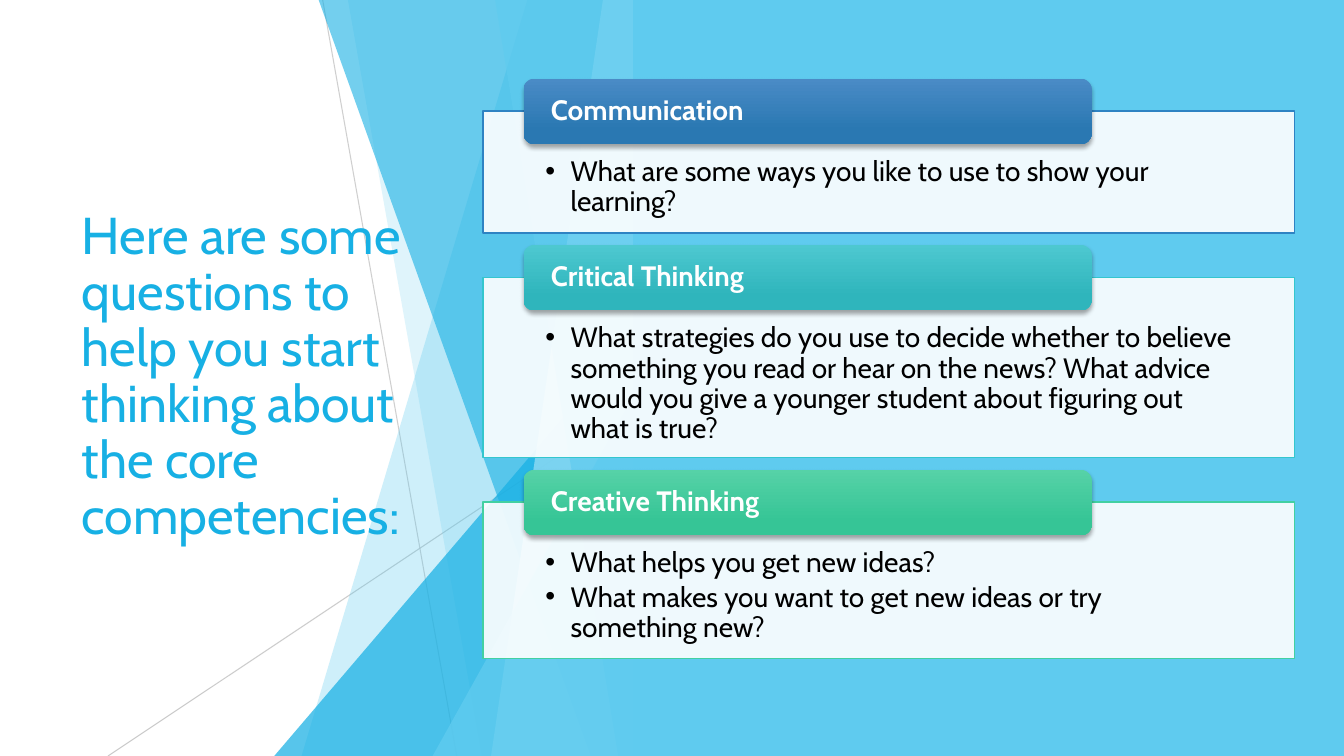
from dataclasses import dataclass

from lxml.etree import SubElement
from pptx import Presentation
from pptx.dml.color import RGBColor
from pptx.enum.shapes import MSO_CONNECTOR, MSO_SHAPE
from pptx.enum.text import MSO_ANCHOR, MSO_AUTO_SIZE, PP_ALIGN
from pptx.oxml.ns import qn
from pptx.util import Inches, Pt


@dataclass(frozen=True)
class Theme:
    font: str = "Cabin"
    big: int = 37
    text: int = 20
    white: str = "FFFFFF"
    ink: str = "000000"
    sky: str = "5FCBEF"
    deep: str = "17B0E4"
    pale: str = "9FE0F5"
    gray: str = "BFBFBF"
    blue: tuple = ("2E83C3", "4A8BC6", "2A78B2")
    teal: tuple = ("34C6CE", "4DC8D0", "2FB5BC")
    green: tuple = ("42D0A2", "56D2A7", "36C596")


@dataclass(frozen=True)
class Box:
    left: int
    top: int
    width: int
    height: int

    def point(self, x, y):
        return (round(self.left + self.width * x / 100),
                round(self.top + self.height * y / 100))

    def inner(self, x, y, w, h):
        return Box(*self.point(x, y), round(self.width * w / 100),
                   round(self.height * h / 100))

    def frame(self):
        return self.left, self.top, self.width, self.height


THEME = Theme()
PAGE = Box(0, 0, Inches(13.33), Inches(7.5))
CARDS = [
    ("Communication", THEME.blue, 16.13,
     ["What are some ways you like to use to show your learning?"]),
    ("Critical Thinking", THEME.teal, 23.87,
     ["What strategies do you use to decide whether to believe something "
      "you read or hear on the news? What advice would you give a younger "
      "student about figuring out what is true?"]),
    ("Creative Thinking", THEME.green, 20.67,
     ["What helps you get new ideas?",
      "What makes you want to get new ideas or try something new?"]),
]


def rgb(code):
    return RGBColor.from_string(code)


def fade(node, alpha):
    tone = next(node.iter(qn("a:srgbClr")))
    SubElement(tone, qn("a:alpha"), val=str(alpha * 1000))


def paint(shape, color, alpha=100, edge=None):
    shape.shadow.inherit = False
    shape.fill.solid()
    shape.fill.fore_color.rgb = rgb(color)
    if alpha < 100:
        fade(shape.element.spPr, alpha)
    if edge:
        shape.line.color.rgb = rgb(edge)
        shape.line.width = Pt(1)
    else:
        shape.line.fill.background()


def write(shape, lines, size=THEME.text, color=THEME.ink, bold=False,
          bullet=False, anchor=MSO_ANCHOR.MIDDLE, pad=(0.1, 0.05, 0.1, 0.05)):
    frame = shape.text_frame
    frame.word_wrap = True
    frame.auto_size = MSO_AUTO_SIZE.NONE
    frame.vertical_anchor = anchor
    (frame.margin_left, frame.margin_top,
     frame.margin_right, frame.margin_bottom) = map(Inches, pad)
    for index, line in enumerate(lines):
        para = frame.add_paragraph() if index else frame.paragraphs[0]
        para.alignment = PP_ALIGN.LEFT
        para.line_spacing = 0.9
        run = para.add_run()
        run.text = line
        run.font.name = THEME.font
        run.font.size = Pt(size)
        run.font.bold = bold
        run.font.color.rgb = rgb(color)
        if bullet:
            para.space_after = Pt(size * 0.15)
            props = para._p.get_or_add_pPr()
            props.set("marL", str(Inches(0.25)))
            props.set("indent", str(-Inches(0.25)))
            SubElement(props, qn("a:buFont"), typeface="Arial")
            SubElement(props, qn("a:buChar"), char="•")


def add_ray(slide, box, start, end, alpha):
    ray = slide.shapes.add_connector(
        MSO_CONNECTOR.STRAIGHT, *box.point(*start), *box.point(*end))
    ray.line.color.rgb = rgb(THEME.gray)
    ray.line.width = Pt(0.75)
    props = ray._element.spPr
    fade(props, alpha)
    SubElement(props, qn("a:effectLst"))


def add_facet(slide, box, top, base, color, alpha):
    pen = slide.shapes.build_freeform(*box.point(top, 0))
    pen.add_line_segments(
        [box.point(100, 0), box.point(100, 100), box.point(base, 100)])
    paint(pen.convert_to_shape(), color, alpha)


def add_peak(slide, box, left, top, color, alpha):
    area = box.inner(left, top, 100 - left, 100 - top)
    peak = slide.shapes.add_shape(MSO_SHAPE.ISOSCELES_TRIANGLE, *area.frame())
    peak.adjustments[0] = 1
    paint(peak, color, alpha)


def add_art(slide, box):
    add_ray(slide, box, (13.48, 0), (50.84, 100), 75)
    add_ray(slide, box, (100, 53.73), (-46.35, 100), 80)
    add_facet(slide, box, 70.51, 7.58, THEME.sky, 30)
    add_facet(slide, box, 20.51, 57.87, THEME.sky, 20)
    add_peak(slide, box, 0, 44.4, THEME.deep, 72)
    add_facet(slide, box, 12.36, 88.2, THEME.deep, 60)
    add_facet(slide, box, 91.57, 60.39, THEME.pale, 70)
    add_facet(slide, box, 61.52, 95.79, THEME.sky, 65)
    add_peak(slide, box, 44.1, 52.4, THEME.sky, 80)


def add_title(slide, box):
    title = slide.shapes.title
    title.left, title.top, title.width, title.height = box.frame()
    write(title, ["Here are some questions to help you start thinking "
                  "about the core competencies:"],
          size=THEME.big, color=THEME.deep)
    slide.shapes._spTree.append(title.element)


def add_panel(slide, box):
    panel = slide.shapes.add_shape(MSO_SHAPE.RECTANGLE, *box.frame())
    paint(panel, THEME.sky)


def add_tab(slide, box, name, shades):
    tab = slide.shapes.add_shape(MSO_SHAPE.ROUNDED_RECTANGLE, *box.frame())
    paint(tab, shades[0])
    tab.fill.gradient()
    tab.fill.gradient_angle = 270
    for stop, shade, place in zip(tab.fill.gradient_stops, shades[1:], (0, 0.78)):
        stop.color.rgb = rgb(shade)
        stop.position = place
    glow = SubElement(
        tab.element.spPr.find(qn("a:effectLst")), qn("a:outerShdw"),
        blurRad=str(Pt(3)), dist=str(Pt(2)), dir="5400000", rotWithShape="0")
    SubElement(glow, qn("a:srgbClr"), val=THEME.ink)
    fade(glow, 35)
    write(tab, [name], color=THEME.white, bold=True, pad=(0.24, 0, 0.24, 0))


def add_cards(slide, box):
    top, gap, lift, tall = 0, 5.87, 4.27, 8.67
    for name, shades, height, lines in CARDS:
        area = Box(box.left, box.top + round(PAGE.height * top / 100),
                   box.width, round(PAGE.height * height / 100))
        card = slide.shapes.add_shape(MSO_SHAPE.RECTANGLE, *area.frame())
        paint(card, THEME.white, 90, shades[0])
        write(card, lines, bullet=True, anchor=MSO_ANCHOR.TOP,
              pad=(0.62, 0.46, 0.62, 0.16))
        tab = area.inner(5, -100 * lift / height, 70, 100 * tall / height)
        add_tab(slide, tab, name, shades)
        top += height + gap


def main():
    deck = Presentation()
    deck.slide_width, deck.slide_height = PAGE.width, PAGE.height
    slide = deck.slides.add_slide(deck.slide_layouts[5])
    add_art(slide, PAGE.inner(20.41, 0, 26.7, 100))
    add_title(slide, PAGE.inner(5.33, 20.13, 29.11, 59.73))
    add_panel(slide, PAGE.inner(47.11, 0, 52.89, 100))
    add_cards(slide, PAGE.inner(35.93, 14.67, 60.39, 72.41))
    deck.save("out.pptx")


if __name__ == "__main__":
    main()
